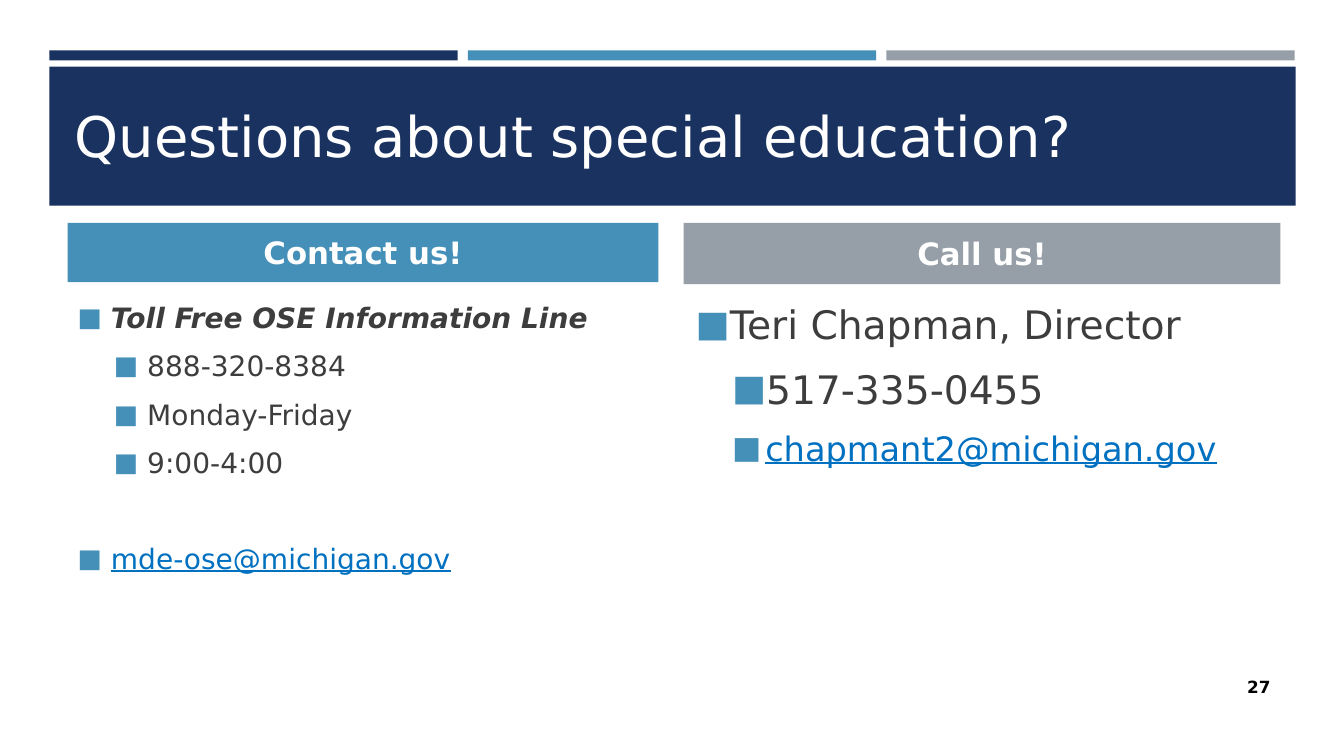
from lxml import etree
from pptx import Presentation
from pptx.dml.color import RGBColor
from pptx.enum.shapes import MSO_SHAPE as Preset
from pptx.enum.text import MSO_ANCHOR as Anchor, MSO_AUTO_SIZE as AutoSize, PP_ALIGN as Align
from pptx.oxml.ns import qn
from pptx.util import Inches, Pt

NAVY = RGBColor(0x1A, 0x32, 0x60)
BLUE = RGBColor(0x45, 0x90, 0xB8)
GRAY = RGBColor(0x96, 0x9F, 0xA7)
INK = RGBColor(0x3D, 0x3D, 0x3D)
LINK = RGBColor(0x00, 0x70, 0xC0)
WHITE = RGBColor(0xFF, 0xFF, 0xFF)
BLACK = RGBColor(0, 0, 0)
FONT = "DejaVu Sans"
COMPARISON = 4
LINE_SHARE = 0.23  # a fifth of the line height, per point of text
EMAIL = {"underline": True, "color": LINK}


class ContactSlide:
    def __init__(self, presentation):
        layout = presentation.slide_layouts[COMPARISON]
        self.slide = presentation.slides.add_slide(layout)
        self.shapes = self.slide.shapes

    def bar(self, left, top, width, height, color):
        shape = self.shapes.add_shape(
            Preset.RECTANGLE, Inches(left), Inches(top), Inches(width), Inches(height))
        shape.shadow.inherit = False
        shape.fill.solid()
        shape.fill.fore_color.rgb = color
        shape.line.fill.background()

    def placeholder(self, index, left, top, width, height, anchor=Anchor.MIDDLE):
        """Move a placeholder to its place, in front of the bars."""
        shape = self.slide.placeholders[index]
        box = {"left": left, "top": top, "width": width, "height": height}
        for name, value in box.items():
            setattr(shape, name, Inches(value))
        shape.text_frame.auto_size = AutoSize.NONE
        shape.text_frame.vertical_anchor = anchor
        self.shapes.element.append(shape.element)
        return shape

    def set_text(self, paragraph, text, size, color, align=Align.LEFT, **formats):
        paragraph.text = text
        paragraph.alignment = align
        font = paragraph.runs[0].font
        formats = {"name": FONT, "size": Pt(size), "bold": False, **formats}
        for name, value in formats.items():
            setattr(font, name, value)
        font.color.rgb = color

    def title(self, text, *box):
        shape = self.placeholder(0, *box)
        self.set_text(shape.text_frame.paragraphs[0], text, 40, WHITE)

    def heading(self, index, text, color, *box):
        shape = self.placeholder(index, *box)
        shape.fill.solid()
        shape.fill.fore_color.rgb = color
        paragraph = shape.text_frame.paragraphs[0]
        paragraph.space_before = Pt(0)
        self.set_text(paragraph, text, 22, WHITE, Align.CENTER, bold=True)

    def bullet(self, paragraph, indent):
        properties = paragraph._p.get_or_add_pPr()
        properties.set("marL", str(Inches(indent)))
        properties.set("indent", str(Inches(-0.33)))
        color = etree.SubElement(properties, qn("a:buClr"))
        etree.SubElement(color, qn("a:srgbClr"), val=str(BLUE))
        etree.SubElement(properties, qn("a:buSzPct"), val="92000")
        etree.SubElement(properties, qn("a:buFont"), typeface=FONT)
        etree.SubElement(properties, qn("a:buChar"), char="■")

    def bullets(self, index, items, *box):
        """Fill a list from (level, text, size, formats) rows."""
        frame = self.placeholder(index, *box, anchor=Anchor.TOP).text_frame
        for number, (level, text, size, formats) in enumerate(items):
            paragraph = frame.add_paragraph() if number else frame.paragraphs[0]
            formats = dict(formats)
            gap = formats.pop("gap", size * LINE_SHARE)
            paragraph.level = level
            self.bullet(paragraph, 0.33 + 0.36 * level)
            paragraph.space_before = Pt(gap if number else 0)
            paragraph.space_after = Pt(6)
            self.set_text(paragraph, text, size, **{"color": INK, **formats})

    def page_number(self, text, left, top, width, height):
        shape = self.shapes.add_textbox(
            Inches(left), Inches(top), Inches(width), Inches(height))
        frame = shape.text_frame
        frame.word_wrap = True
        frame.vertical_anchor = Anchor.MIDDLE
        self.set_text(frame.paragraphs[0], text, 12, BLACK, Align.RIGHT, bold=True)


def main():
    presentation = Presentation()
    presentation.slide_width = Inches(13.33)
    presentation.slide_height = Inches(7.5)
    slide = ContactSlide(presentation)

    # Banner
    for column, color in enumerate((NAVY, BLUE, GRAY)):
        slide.bar(0.49 + 4.15 * column, 0.5, 4.05, 0.1, color)
    slide.bar(0.49, 0.66, 12.36, 1.38, NAVY)
    slide.title("Questions about special education?", 0.64, 0.8, 12.06, 1.08)

    # Contact column
    slide.heading(1, "Contact us!", BLUE, 0.67, 2.21, 5.86, 0.59)
    slide.bullets(2, [
        (0, "Toll Free OSE Information Line", 20, {"bold": True, "italic": True}),
        (1, "888-320-8384", 20, {}),
        (1, "Monday-Friday", 20, {}),
        (1, "9:00-4:00", 20, {}),
        (0, "mde-ose@michigan.gov", 20, {**EMAIL, "gap": 38.6}),
    ], 0.67, 2.93, 5.9, 3.48)

    # Call column
    slide.heading(3, "Call us!", GRAY, 6.78, 2.21, 5.92, 0.61)
    slide.bullets(4, [
        (0, "Teri Chapman, Director", 28, {}),
        (1, "517-335-0455", 28, {}),
        (1, "chapmant2@michigan.gov", 24, EMAIL),
    ], 6.8, 2.93, 5.9, 3.48)

    # Page number
    slide.page_number("27", 11.55, 6.61, 1.15, 0.4)
    presentation.save("out.pptx")


if __name__ == "__main__":
    main()
